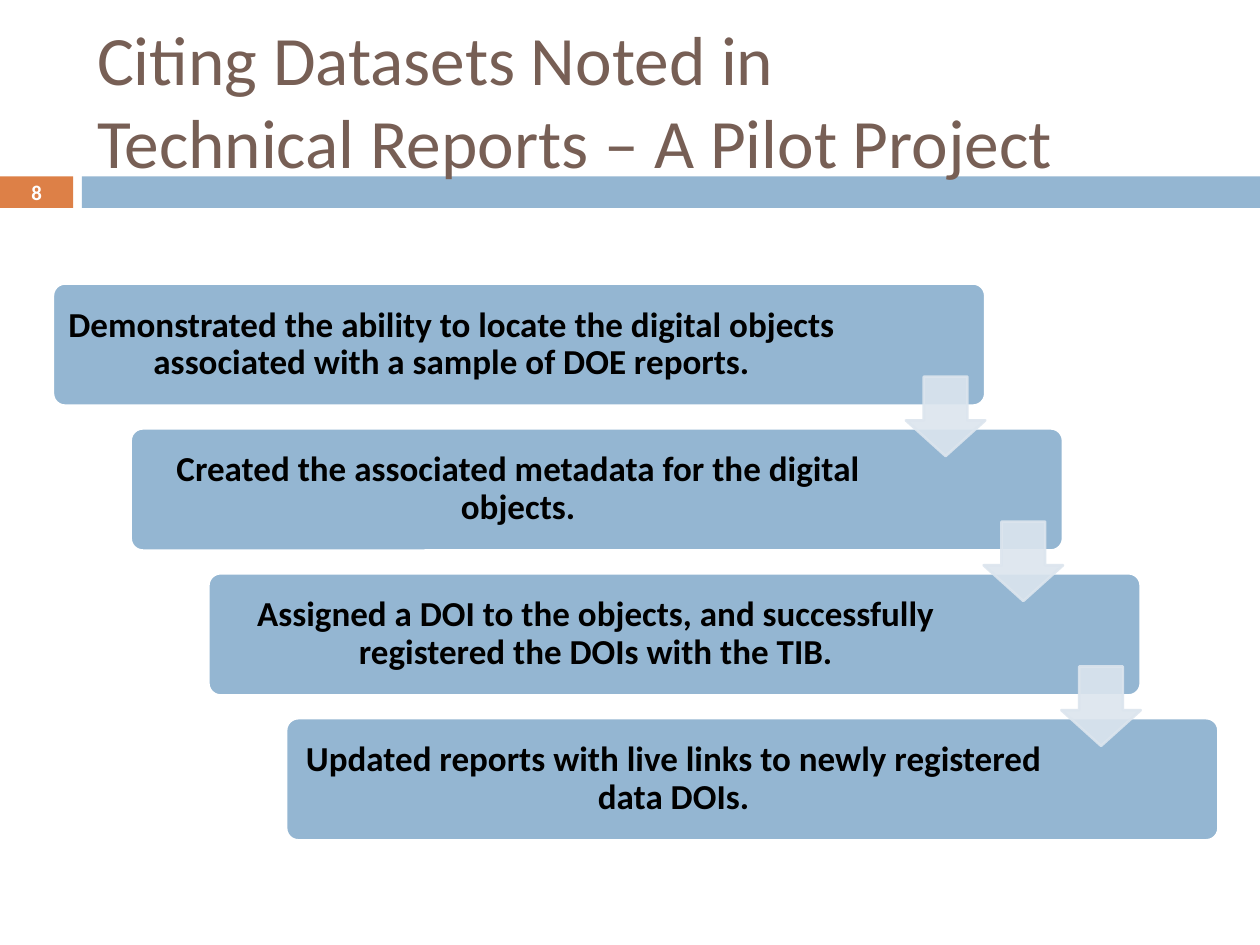
from typing import NamedTuple

from lxml import etree
from pptx import Presentation
from pptx.dml.color import RGBColor
from pptx.enum import shapes, text
from pptx.oxml import ns
from pptx.util import Inches, Pt

COLORS = {
    "orange": "DD8047",
    "blue": "94B6D2",
    "brown": "775F55",
    "arrow": "DCE5EE",
    "white": "FFFFFF",
    "black": "000000",
}
FONT = "Calibri"
FIRST_LEFT, FIRST_TOP = 0.42, 2.25
STEP_RIGHT, STEP_DOWN = 0.617, 1.15
CARD_WIDTH, CARD_HEIGHT = 7.4, 0.97
ARROW_SIZE = 0.63


class Box(NamedTuple):
    left: float
    top: float
    width: float
    height: float

    def lengths(self) -> tuple:
        return tuple(Inches(value) for value in self)


class Step(NamedTuple):
    wording: str
    text_width: float = 6.09


STEPS = [
    Step("Demonstrated the ability to locate the digital objects "
         "associated with a sample of DOE reports.", 6.27),
    Step("Created the associated metadata for the digital objects."),
    Step("Assigned a DOI to the objects, and successfully "
         "registered the DOIs with the TIB."),
    Step("Updated reports with live links to newly registered data DOIs."),
]


def color(name: str) -> RGBColor:
    return RGBColor.from_string(COLORS[name])


def add_block(page, kind, box: Box, fill: str, line: str | None = None,
              adjustments: tuple = ()):
    block = page.shapes.add_shape(kind, *box.lengths())
    block.shadow.inherit = False
    block.fill.solid()
    block.fill.fore_color.rgb = color(fill)
    if line:
        block.line.color.rgb = color(line)
        block.line.width = Pt(1.5)
    else:
        block.line.fill.background()
    for index, value in enumerate(adjustments):
        block.adjustments[index] = value
    return block


def set_opacity(block, percent: int) -> None:
    """Apply one opacity to the fill and the line."""
    for tone in block._element.spPr.iter(ns.qn("a:srgbClr")):
        etree.SubElement(tone, ns.qn("a:alpha"), val=str(percent * 1000))


def add_span(para, wording: str, size: float, tone: str, bold: bool = False) -> None:
    span = para.add_run()
    span.text = wording
    span.font.name = FONT
    span.font.size = Pt(size)
    span.font.bold = bold
    span.font.color.rgb = color(tone)


def add_label(page, box: Box, wording: str, size: float, tone: str,
              inset: float, spacing: float = 1.0) -> None:
    """Add bold text centred both ways."""
    frame = page.shapes.add_textbox(*box.lengths()).text_frame
    frame.word_wrap = True
    frame.vertical_anchor = text.MSO_ANCHOR.MIDDLE
    frame.margin_left = frame.margin_right = Inches(inset)
    frame.margin_top = frame.margin_bottom = Inches(min(inset, 0.08))
    para = frame.paragraphs[0]
    para.alignment = text.PP_ALIGN.CENTER
    para.line_spacing = spacing
    add_span(para, wording, size, tone, bold=True)


def set_title(page) -> None:
    title = page.shapes.title
    title.left, title.top, title.width, title.height = Box(0.67, 0.25, 8.92, 1.08).lengths()
    frame = title.text_frame
    frame.word_wrap = True
    frame.auto_size = text.MSO_AUTO_SIZE.NONE
    frame.vertical_anchor = text.MSO_ANCHOR.MIDDLE
    para = frame.paragraphs[0]
    para.alignment = text.PP_ALIGN.LEFT
    add_span(para, "Citing Datasets Noted in ", 39.6, "brown")
    para.add_line_break()
    add_span(para, "Technical Reports – A Pilot Project", 39.6, "brown")


def add_step(page, index: int, step: Step) -> None:
    left = FIRST_LEFT + index * STEP_RIGHT
    top = FIRST_TOP + index * STEP_DOWN
    add_block(page, shapes.MSO_SHAPE.ROUNDED_RECTANGLE,
              Box(left, top, CARD_WIDTH, CARD_HEIGHT), "blue", "white", (0.1,))
    add_label(page, Box(left + 0.03, top + 0.03, step.text_width, 0.91),
              step.wording, 20, "black", inset=0.08, spacing=0.9)


def add_step_arrow(page, index: int) -> None:
    box = Box(FIRST_LEFT + CARD_WIDTH - ARROW_SIZE + index * STEP_RIGHT,
              FIRST_TOP + 0.74 + index * STEP_DOWN, ARROW_SIZE, ARROW_SIZE)
    # The preset's adjustments are head length, then shaft width as listed.
    arrow = add_block(page, shapes.MSO_SHAPE.DOWN_ARROW, box, "arrow", "arrow", (0.55, 0.45))
    set_opacity(arrow, 90)


def main() -> None:
    deck = Presentation()
    deck.slide_width, deck.slide_height = Inches(10), Inches(7.5)
    page = deck.slides.add_slide(deck.slide_layouts[5])
    rectangle = shapes.MSO_SHAPE.RECTANGLE
    add_block(page, rectangle, Box(0, 1.4, 0.58, 0.25), "orange")
    add_block(page, rectangle, Box(0.65, 1.4, 9.35, 0.25), "blue")
    set_title(page)
    # Bring the title in front of the bars it overlaps.
    page.shapes._spTree.append(page.shapes.title._element)
    for index, step in enumerate(STEPS):
        add_step(page, index, step)
    for index in range(len(STEPS) - 1):
        add_step_arrow(page, index)
    add_label(page, Box(0, 1.39, 0.58, 0.27), "8", 11.9, "white", inset=0.1)
    deck.save("out.pptx")


if __name__ == "__main__":
    main()
